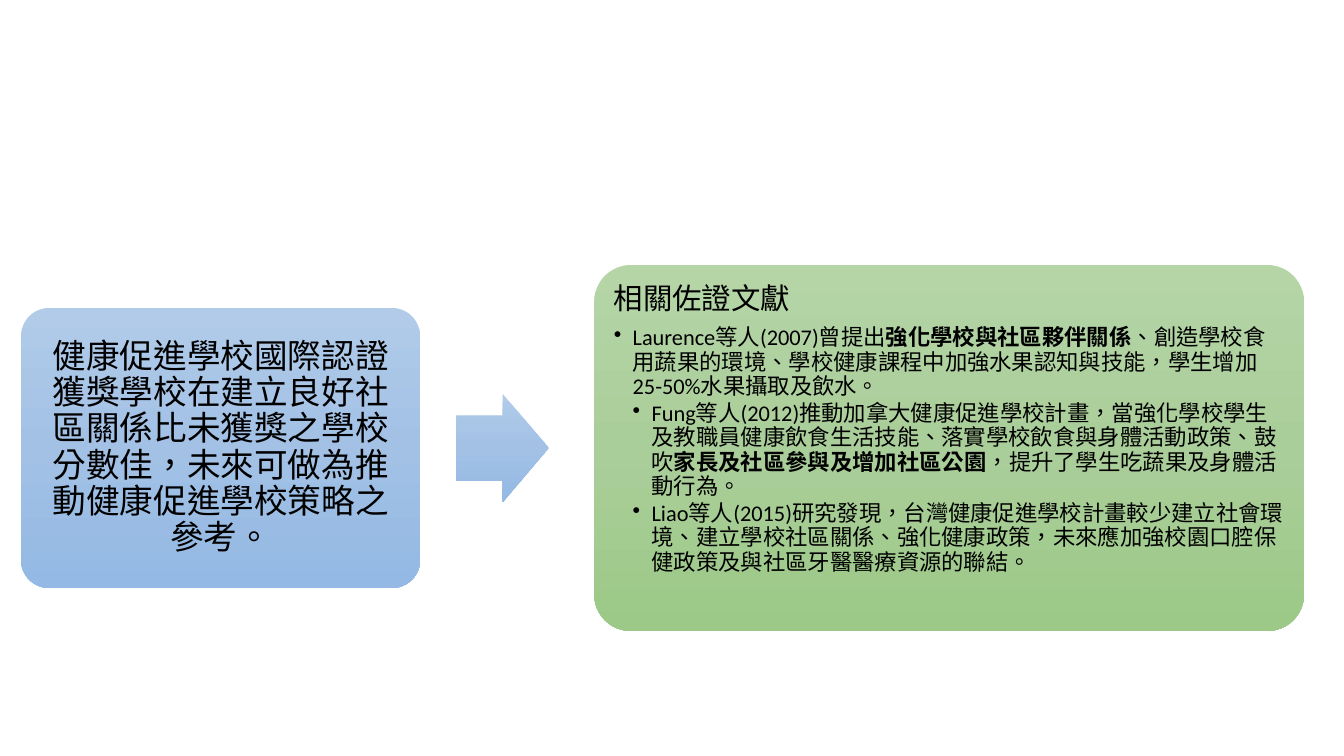
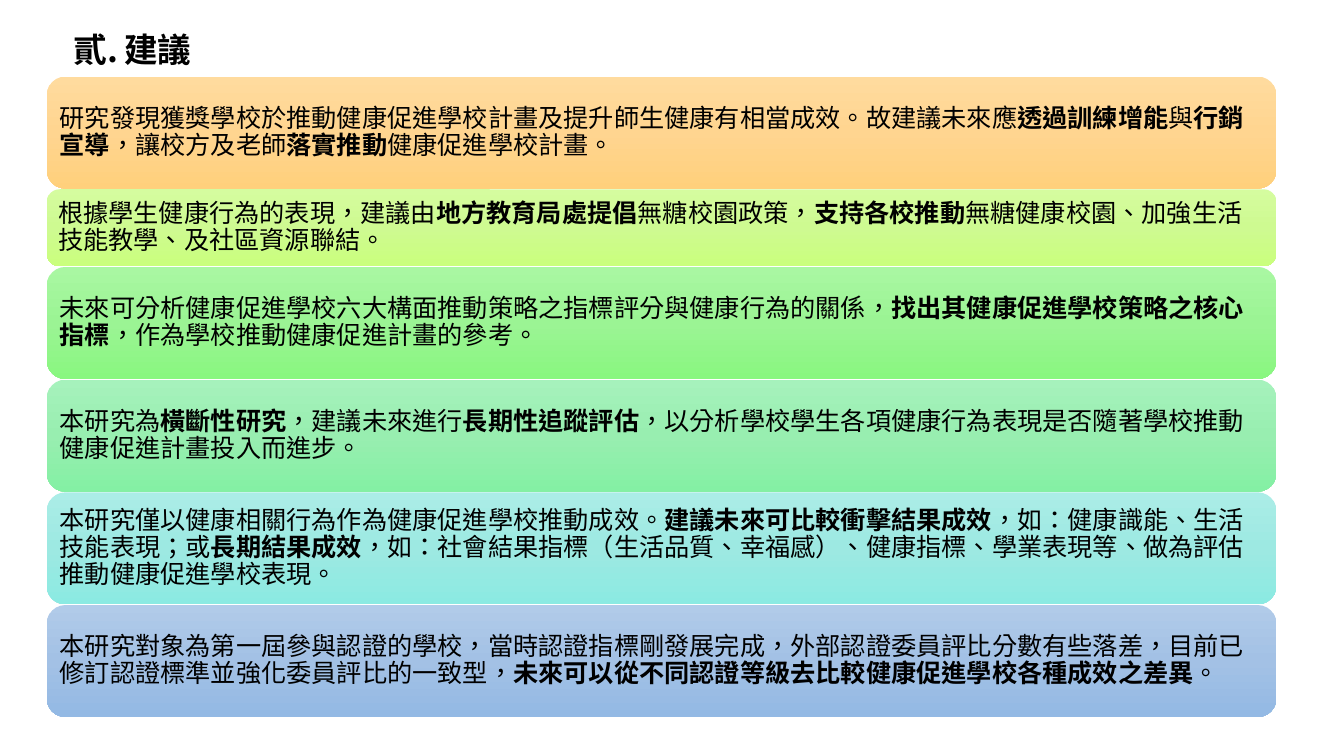
"""Build two slides on health promoting schools: evidence and recommendations."""
from lxml import etree
from pptx import Presentation
from pptx.dml.color import RGBColor
from pptx.enum.lang import MSO_LANGUAGE_ID
from pptx.enum.shapes import MSO_SHAPE
from pptx.enum.text import MSO_ANCHOR, MSO_AUTO_SIZE, PP_ALIGN
from pptx.oxml.ns import qn
from pptx.util import Pt

ROUNDED, ARROW = MSO_SHAPE.ROUNDED_RECTANGLE, MSO_SHAPE.RIGHT_ARROW
TOP, MIDDLE = MSO_ANCHOR.TOP, MSO_ANCHOR.MIDDLE
LEFT, CENTER = PP_ALIGN.LEFT, PP_ALIGN.CENTER
NO_FIT = MSO_AUTO_SIZE.NONE
CHINESE = MSO_LANGUAGE_ID.TRADITIONAL_CHINESE
TITLE_ONLY, BLANK = 5, 6

FONT = "Calibri"
COLORS = {
    "text": "000000",
    "blue": ("B1CBE9", "A3C1E5", "93B9E4"),
    "leaf": ("B5D5A7", "AACE9A", "9CC987"),
    "orange": ("FFDB9E", "FFD590", "FFD07C"),
    "lime": ("D5FC9F", "CEFA91", "CAFF7D"),
    "green": ("A9F7A2", "9BF494", "89F780"),
    "mint": ("A6F2BC", "98EEB0", "84F0A4"),
    "aqua": ("ABEDE7", "9DE9E2", "8BEAE2"),
}

FINDING = "健康促進學校國際認證獲獎學校在建立良好社區關係比未獲獎之學校分數佳，未來可做為推動健康促進學校策略之參考。"
EVIDENCE_HEADING = "相關佐證文獻"
EVIDENCE = [
    (1, "Laurence等人(2007)曾提出*強化學校與社區夥伴關係*、創造學校食用蔬果的環境、學校健康課程中加強水果認知與技能，學生增加25-50%水果攝取及飲水。"),
    (2, "Fung等人(2012)推動加拿大健康促進學校計畫，當強化學校學生及教職員健康飲食生活技能、落實學校飲食與身體活動政策、鼓吹*家長及社區參與及增加社區公園*，提升了學生吃蔬果及身體活動行為。"),
    (2, "Liao等人(2015)研究發現，台灣健康促進學校計畫較少建立社會環境、建立學校社區關係、強化健康政策，未來應加強校園口腔保健政策及與社區牙醫醫療資源的聯結。"),
]
RECOMMENDATIONS = [
    ("orange", 80, "研究發現獲獎學校於推動健康促進學校計畫及提升師生健康有相當成效。故建議未來應*透過訓練增能*與*行銷宣導*，讓校方及老師*落實推動*健康促進學校計畫。"),
    ("lime", 55, "根據學生健康行為的表現，建議由*地方教育局處提倡*無糖校園政策，*支持各校推動*無糖健康校園、加強生活技能教學、及社區資源聯結。"),
    ("green", 80, "未來可分析健康促進學校六大構面推動策略之指標評分與健康行為的關係，*找出其健康促進學校策略之核心指標*，作為學校推動健康促進計畫的參考。"),
    ("mint", 80, "本研究為*橫斷性研究*，建議未來進行*長期性追蹤評估*，以分析學校學生各項健康行為表現是否隨著學校推動健康促進計畫投入而進步。"),
    ("aqua", 80, "本研究僅以健康相關行為作為健康促進學校推動成效。*建議未來可比較衝擊結果成效*，如：健康識能、生活技能表現；或*長期結果成效*，如：社會結果指標（生活品質、幸福感）、健康指標、學業表現等、做為評估推動健康促進學校表現。"),
    ("blue", 80, "本研究對象為第一屆參與認證的學校，當時認證指標剛發展完成，外部認證委員評比分數有些落差，目前已修訂認證標準並強化委員評比的一致型，*未來可以從不同認證等級去比較健康促進學校各種成效之差異*。"),
]


def add_panel(slide, kind, box, color, adjustments=()):
    """Add a borderless shape with a vertical three-stop gradient."""
    panel = slide.shapes.add_shape(kind, *map(Pt, box))
    panel.shadow.inherit = False
    panel.line.fill.background()
    for index, value in enumerate(adjustments):
        panel.adjustments[index] = value
    panel.fill.gradient()
    panel.fill.gradient_angle = 270
    stops = panel._element.spPr.find(".//" + qn("a:gsLst"))
    for stop in list(stops):
        stops.remove(stop)
    for position, value in zip((0, 50000, 100000), COLORS[color]):
        stop = etree.SubElement(stops, qn("a:gs"), pos=str(position))
        etree.SubElement(stop, qn("a:srgbClr"), val=value)
    return panel


def set_frame(frame, inset, anchor):
    """Set the wrapping, insets and anchor of a text frame."""
    frame.word_wrap = True
    frame.auto_size = NO_FIT
    frame.vertical_anchor = anchor
    frame.margin_left = frame.margin_right = Pt(inset)
    frame.margin_top = frame.margin_bottom = Pt(inset)


def write(paragraph, text, size, after=0.35, align=LEFT):
    """Write runs, making the parts between asterisks bold."""
    paragraph.alignment = align
    paragraph.line_spacing = 0.9
    paragraph.space_before = Pt(0)
    paragraph.space_after = Pt(round(size * after, 2))
    for index, part in enumerate(text.split("*")):
        if part:
            run = paragraph.add_run()
            run.text = part
            run.font.size = Pt(size)
            run.font.name = FONT
            run.font.bold = index % 2 == 1
            run.font.language_id = CHINESE
            run.font.color.rgb = RGBColor.from_string(COLORS["text"])


def set_marker(paragraph, tag, indent, hanging, **attributes):
    """Give a paragraph a bullet or number with a hanging indent."""
    properties = paragraph._p.get_or_add_pPr()
    properties.set("marL", str(Pt(indent)))
    properties.set("indent", str(-Pt(hanging)))
    etree.SubElement(properties, qn(tag), **attributes)


def add_card(slide, box, color, text, size, adjustments=(), anchor=MIDDLE, align=LEFT):
    """Add a rounded card with its first paragraph and return its frame."""
    frame = add_panel(slide, ROUNDED, box, color, adjustments).text_frame
    set_frame(frame, round(size * 0.3, 2), anchor)
    write(frame.paragraphs[0], text, size, align=align)
    return frame


def add_evidence_list(frame):
    """Append the bulleted literature to the evidence card."""
    step = 13.5
    for level, text in EVIDENCE:
        paragraph = frame.add_paragraph()
        paragraph.level = level
        write(paragraph, text, 16, after=0.15)
        set_marker(paragraph, "a:buChar", level * step, step, char="•")


def add_evidence_slide(deck):
    """Add the slide leading from the finding to its literature."""
    slide = deck.slides.add_slide(deck.slide_layouts[BLANK])
    middle = 320

    def centred(left, width, height):
        """Return a box centred on the row's middle."""
        return left, middle - height / 2, width, height

    add_card(slide, centred(15.1, 285, 200), "blue", FINDING, 24, (0.1,), align=CENTER)
    add_panel(slide, ARROW, centred(326, 66, 77.4), "blue", (0.6, 0.5))
    evidence = add_card(slide, centred(424.5, 507, 261.4), "leaf",
                        EVIDENCE_HEADING, 21, (0.1,), anchor=TOP)
    add_evidence_list(evidence)


def add_title(slide, box, text):
    """Place the numbered section title in its placeholder."""
    title = slide.shapes.title
    title.left, title.top, title.width, title.height = map(Pt, box)
    set_frame(title.text_frame, 3.6, TOP)
    title.text_frame.margin_left = title.text_frame.margin_right = Pt(7.2)
    paragraph = title.text_frame.paragraphs[0]
    write(paragraph, f"*{text}*", 24, after=0)
    paragraph.line_spacing = 1.0
    set_marker(paragraph, "a:buAutoNum", 36, 36, type="ea1ChtPeriod", startAt="2")


def add_recommendations(slide, box, gap):
    """Stack the recommendation cards down from the top of the box."""
    left, top, width = box
    for color, height, text in RECOMMENDATIONS:
        add_card(slide, (left, top, width, height), color, text, 18)
        top += height + gap


def add_recommendation_slide(deck):
    """Add the slide with the title and the stacked recommendations."""
    slide = deck.slides.add_slide(deck.slide_layouts[TITLE_ONLY])
    add_recommendations(slide, (33.4, 54.7, 878.4), 0.5)
    add_title(slide, (45.4, 17.3, 147.6, 36), "建議")


def main():
    """Build and save the deck."""
    deck = Presentation()
    deck.slide_width, deck.slide_height = Pt(960), Pt(540)
    add_evidence_slide(deck)
    add_recommendation_slide(deck)
    deck.save("out.pptx")


if __name__ == "__main__":
    main()
